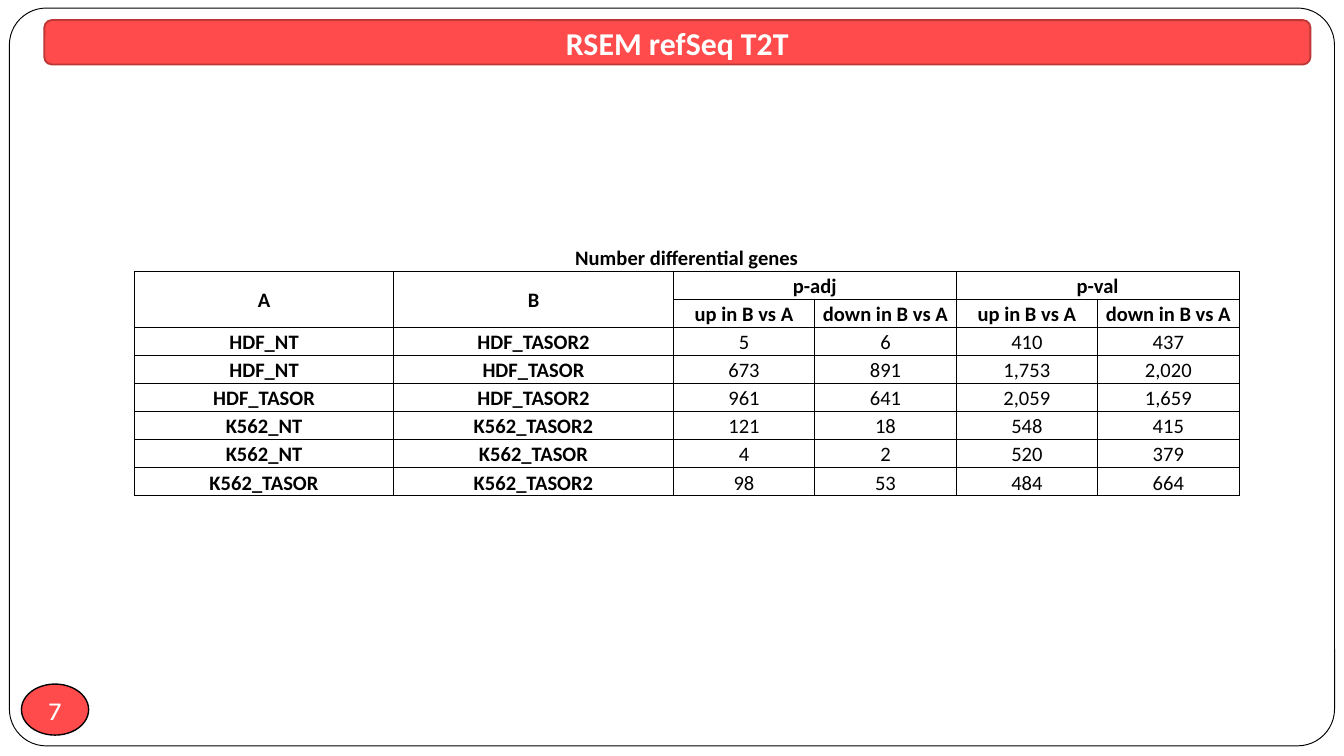
from lxml.etree import SubElement
from pptx import Presentation
from pptx.dml.color import RGBColor
from pptx.enum.shapes import MSO_SHAPE as SHAPE
from pptx.enum.text import MSO_ANCHOR as ANCHOR, PP_ALIGN as ALIGN
from pptx.oxml.ns import qn
from pptx.util import Inches, Pt

COLORS = {"white": "FFFFFF", "black": "000000", "red": "FF4B4B", "dark red": "BD3737"}

TITLE = "RSEM refSeq T2T"
TITLE_BOX = (0.33, 0.15, 9.42, 0.33)
PAGE = "7"
CAPTION = "Number differential genes"
UP, DOWN = "up in B vs A", "down in B vs A"
HEADER = [
    [CAPTION, "", "", "", "", ""],
    ["A", "B", "p-adj", "", "p-val", ""],
    ["", "", UP, DOWN, UP, DOWN],
]
COUNTS = [
    ["HDF_NT", "HDF_TASOR2", "5", "6", "410", "437"],
    ["HDF_NT", "HDF_TASOR", "673", "891", "1,753", "2,020"],
    ["HDF_TASOR", "HDF_TASOR2", "961", "641", "2,059", "1,659"],
    ["K562_NT", "K562_TASOR2", "121", "18", "548", "415"],
    ["K562_NT", "K562_TASOR", "4", "2", "520", "379"],
    ["K562_TASOR", "K562_TASOR2", "98", "53", "484", "664"],
]
ROWS = HEADER + COUNTS
MERGES = [((0, 0), (0, 5)), ((1, 0), (2, 0)), ((1, 1), (2, 1)),
          ((1, 2), (1, 3)), ((1, 4), (1, 5))]
TABLE_WIDTH, TABLE_HEIGHT = 8.22, 1.88
NAME_WIDTHS = [1.93, 2.08]
COL_WIDTHS = NAME_WIDTHS + [(TABLE_WIDTH - sum(NAME_WIDTHS)) / 4] * 4
ROW_HEIGHT = TABLE_HEIGHT / len(ROWS)


def rgb(name):
    return RGBColor.from_string(COLORS[name])


def write(tf, text, size, font, color, bold=False):
    tf.text = text
    p = tf.paragraphs[0]
    p.alignment = ALIGN.CENTER
    for r in p.runs:
        r.font.size, r.font.name, r.font.bold = Pt(size), font, bold
        r.font.color.rgb = rgb(color)


def add_shape(slide, kind, box, fill, line, width):
    sp = slide.shapes.add_shape(kind, *map(Inches, box))
    sp.shadow.inherit = False
    sp.fill.solid()
    sp.fill.fore_color.rgb = rgb(fill)
    sp.line.color.rgb = rgb(line)
    sp.line.width = Pt(width)
    return sp


def set_borders(cell, sides):
    """Draw thin black lines on the given sides, before the cell's fill."""
    tc_pr = cell._tc.get_or_add_tcPr()
    for i, side in enumerate(sides):
        ln = SubElement(tc_pr, qn(f"a:ln{side}"), w=str(Pt(0.5)))
        fill = SubElement(ln, qn("a:solidFill"))
        SubElement(fill, qn("a:srgbClr"), val=COLORS["black"])
        tc_pr.insert(i, ln)


def add_title(slide):
    add_shape(slide, SHAPE.ROUNDED_RECTANGLE, TITLE_BOX, "red", "dark red", 1)
    title = slide.shapes.title
    title.left, title.top, title.width, title.height = map(Inches, TITLE_BOX)
    write(title.text_frame, TITLE, 17, "Calibri", "white", bold=True)
    title.text_frame.vertical_anchor = ANCHOR.MIDDLE
    slide.shapes._spTree.append(title._element)  # bring in front of the bar


def add_gene_table(slide):
    frame = slide.shapes.add_table(
        len(ROWS), len(COL_WIDTHS), Inches(1), Inches(1.81),
        Inches(TABLE_WIDTH), Inches(TABLE_HEIGHT))
    table = frame.table
    table.first_row = table.horz_banding = False
    for col, width in zip(table.columns, COL_WIDTHS):
        col.width = Inches(width)
    for i, row in enumerate(ROWS):
        table.rows[i].height = Inches(ROW_HEIGHT)
        for j, text in enumerate(row):
            cell = table.cell(i, j)
            cell.margin_left = cell.margin_right = cell.margin_top = Inches(0.01)
            cell.margin_bottom = 0
            spans_rows = i == 1 and j < len(NAME_WIDTHS)
            cell.vertical_anchor = ANCHOR.MIDDLE if spans_rows else ANCHOR.BOTTOM
            cell.fill.background()
            set_borders(cell, "LRTB" if i else "B")
            bold = i < len(HEADER) or j < len(NAME_WIDTHS)
            write(cell.text_frame, text, 11, "Calibri", "black", bold)
            if not text:
                cell.text_frame.paragraphs[0].font.size = Pt(11)
    for start, end in MERGES:
        table.cell(*start).merge(table.cell(*end))


def main():
    prs = Presentation()
    prs.slide_width = Inches(10)
    prs.slide_height = prs.slide_width * 9 // 16
    slide = prs.slides.add_slide(prs.slide_layouts[5])

    border = add_shape(slide, SHAPE.ROUNDED_RECTANGLE, (0.07, 0.06, 9.86, 5.49),
                       "white", "black", 0.5)
    border.adjustments[0] = 0.05

    badge = add_shape(slide, SHAPE.OVAL, (0.16, 5.09, 0.5, 0.38), "red", "black", 0.75)
    tf = badge.text_frame
    tf.margin_left = tf.margin_right = tf.margin_top = tf.margin_bottom = 0
    tf.word_wrap = False
    tf.vertical_anchor = ANCHOR.MIDDLE
    write(tf, PAGE, 14, "Karla", "white")

    add_title(slide)
    add_gene_table(slide)
    prs.save("out.pptx")


if __name__ == "__main__":
    main()
